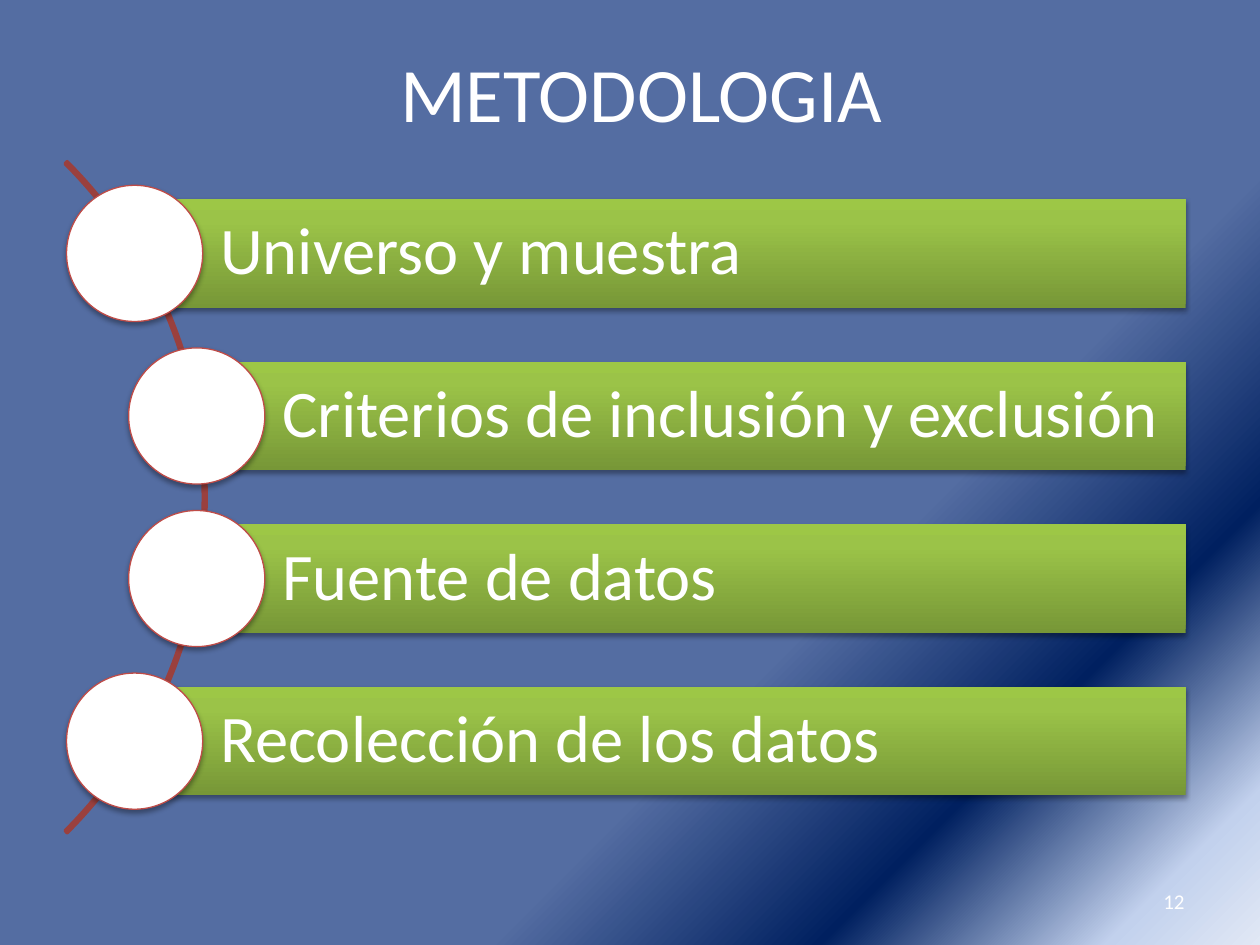
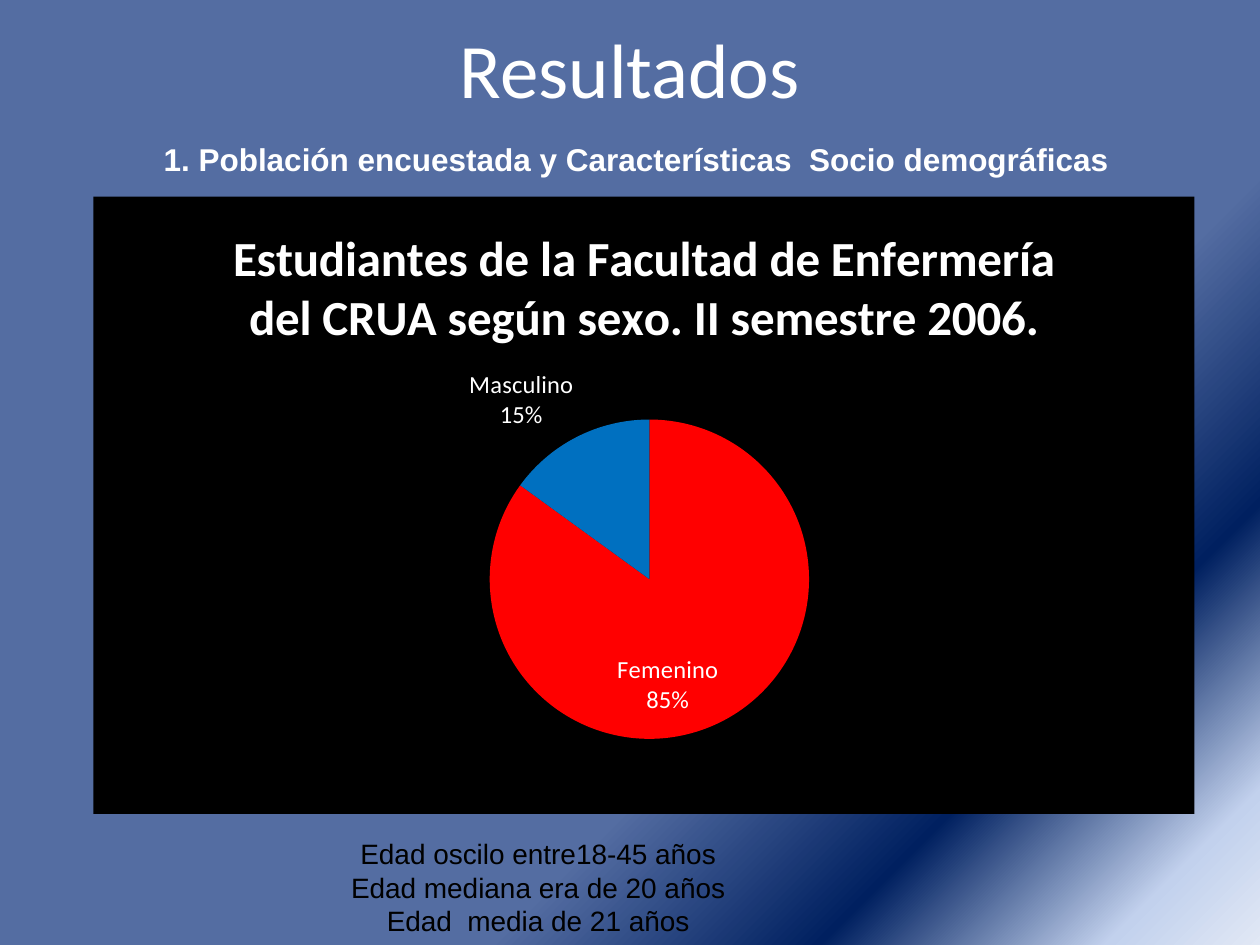
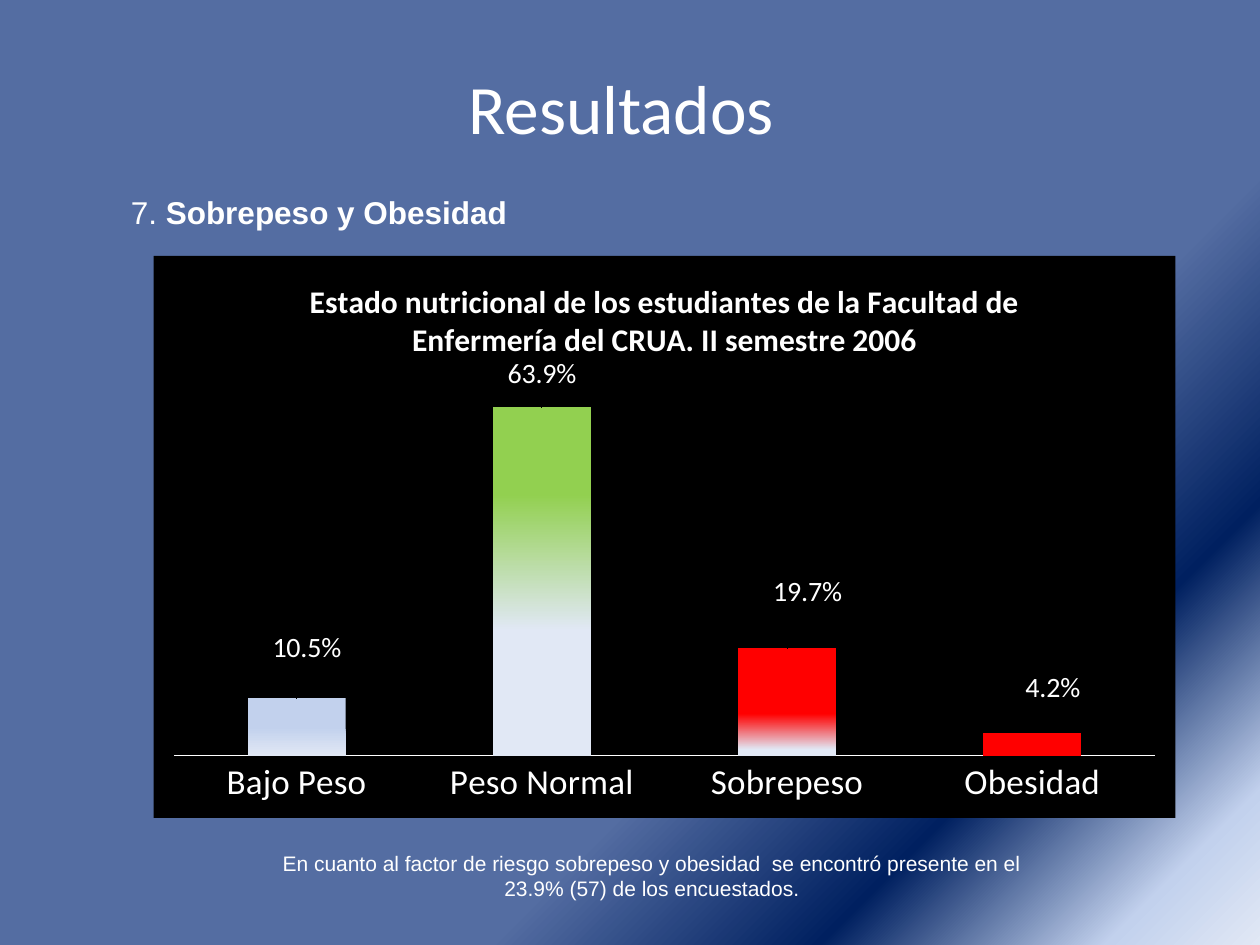
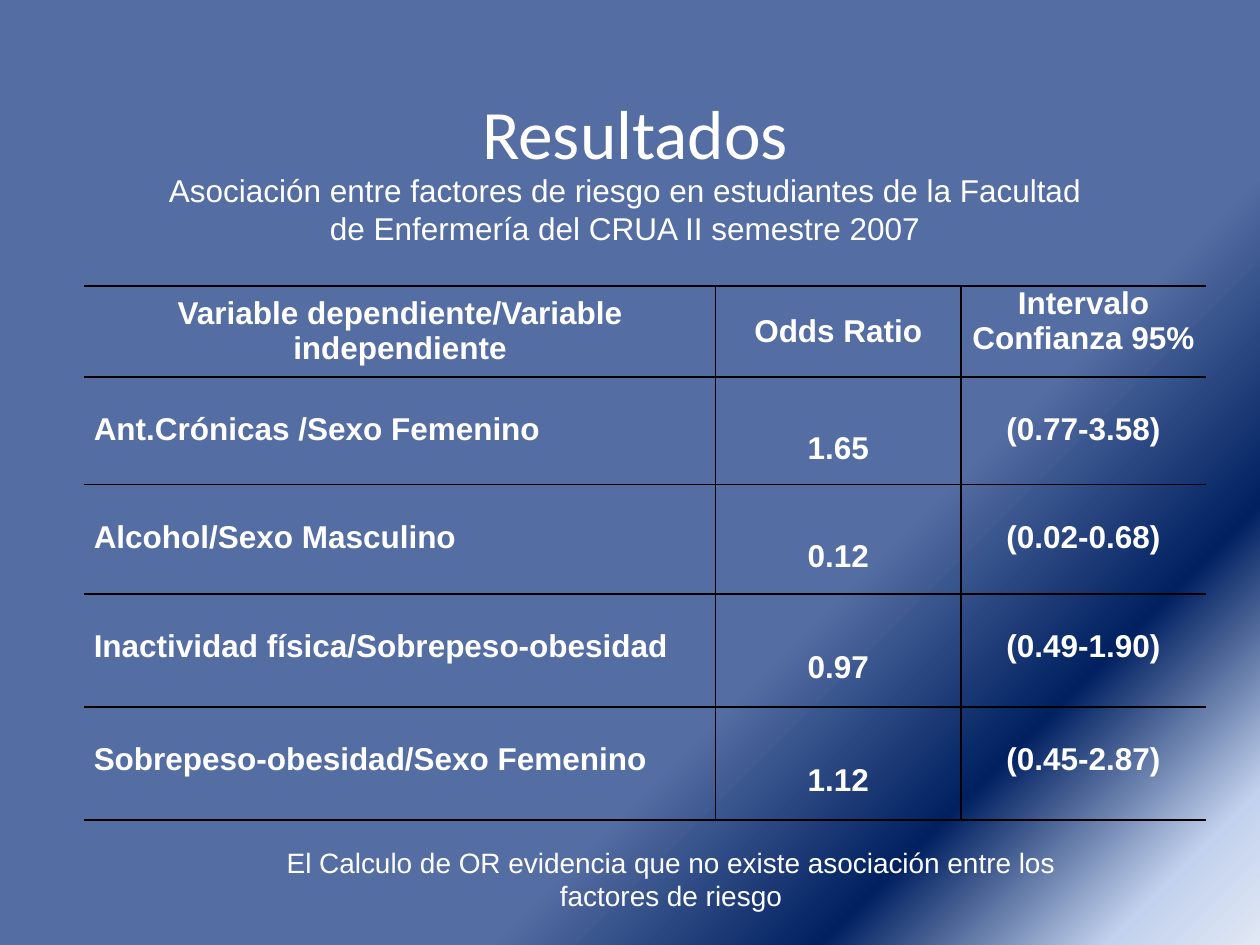
from lxml import etree
from pptx import Presentation
from pptx.chart.data import CategoryChartData
from pptx.dml.color import RGBColor
from pptx.enum.chart import XL_CHART_TYPE, XL_LABEL_POSITION, XL_TICK_MARK
from pptx.enum.shapes import MSO_SHAPE
from pptx.enum.text import MSO_ANCHOR, PP_ALIGN
from pptx.oxml.ns import qn
from pptx.util import Pt

LEFT, CENTER, RIGHT, JUSTIFY = PP_ALIGN.LEFT, PP_ALIGN.CENTER, PP_ALIGN.RIGHT, PP_ALIGN.JUSTIFY
TOP, MIDDLE = MSO_ANCHOR.TOP, MSO_ANCHOR.MIDDLE
INSIDE_END, OUTSIDE_END = XL_LABEL_POSITION.INSIDE_END, XL_LABEL_POSITION.OUTSIDE_END
PIE, COLUMNS = XL_CHART_TYPE.PIE, XL_CHART_TYPE.COLUMN_CLUSTERED
NO_TICKS = XL_TICK_MARK.NONE
ARC, OVAL, RECTANGLE = MSO_SHAPE.BLOCK_ARC, MSO_SHAPE.OVAL, MSO_SHAPE.RECTANGLE

COLORS = {
    "white": "FFFFFF", "black": "000000", "red": "FF0000", "blue": "0070C0",
    "slate": "546DA2", "navy": "002060", "sky": "C2D1ED", "pale": "E1E8F5",
    "lime": "92D050", "arc": "9A403E", "ring": "BF4C48",
    "bar_dark": "779737", "bar_mid": "9BC348", "bar_light": "9DC746",
}
HEADING, BODY = "Calibri", "Arial"
BACKDROP = [(65, "slate"), (80, "navy"), (93, "sky"), (100, "pale")]
BAR_STOPS = [(0, "bar_dark"), (80, "bar_mid"), (100, "bar_light")]


# Shared helpers
def rgb(name):
    return RGBColor.from_string(COLORS[name])


def points(box):
    return [Pt(length) for length in box]


def add_xml(parent, tag, **attributes):
    return etree.SubElement(parent, qn(tag), {k: str(v) for k, v in attributes.items()})


def set_solid(fill, color):
    fill.solid()
    fill.fore_color.rgb = rgb(color)


def set_gradient(fill, stops, angle):
    """Angle is clockwise, in degrees."""
    fill.gradient()
    fill.gradient_angle = 360 - angle
    stop_list = fill.gradient_stops[0]._gs.getparent()
    for old in list(stop_list):
        stop_list.remove(old)
    for position, color in stops:
        stop = add_xml(stop_list, "a:gs", pos=position * 1000)
        add_xml(stop, "a:srgbClr", val=COLORS[color])


def style_font(font, size, color="white", name=HEADING, bold=False):
    font.size, font.name, font.bold = Pt(size), name, bold
    font.color.rgb = rgb(color)


def add_run(paragraph, text, size, **style):
    run = paragraph.add_run()
    run.text = text
    style_font(run.font, size, **style)


def add_text(slide, box, lines, size, align=LEFT, anchor=TOP, name=BODY, **style):
    frame = slide.shapes.add_textbox(*points(box)).text_frame
    frame.word_wrap = True
    frame.vertical_anchor = anchor
    for index, line in enumerate(lines):
        paragraph = frame.add_paragraph() if index else frame.paragraphs[0]
        paragraph.alignment = align
        add_run(paragraph, line, size, name=name, **style)
    return frame


def add_slide(prs, title, box, size):
    slide = prs.slides.add_slide(prs.slide_layouts[6])
    set_gradient(slide.background.fill, BACKDROP, 45)
    add_text(slide, box, [title], size, CENTER, MIDDLE, HEADING)
    return slide


def soft_shadow(shape):
    shape.shadow.inherit = False
    effects = shape.element.spPr.find(qn("a:effectLst"))
    shadow = add_xml(effects, "a:outerShdw", blurRad=Pt(3.1), dist=Pt(1.8),
                     dir=90 * 60000, rotWithShape=0)
    add_xml(add_xml(shadow, "a:srgbClr", val=COLORS["black"]), "a:alpha", val=35000)


# Curved list of topics
def add_topic_list(slide, box, topics):
    left, top, width, height = box
    pitch, bar_height, disc, step_in = 92.9, 62, 77.8, 35.5

    arc_size = 542.2
    arc = slide.shapes.add_shape(ARC, *points(
        (left + 79.8 - arc_size, top + (height - arc_size) / 2, arc_size, arc_size)))
    arc.adjustments[0], arc.adjustments[1], arc.adjustments[2] = 189, 27, 0.003
    arc.shadow.inherit = False
    arc.fill.background()
    arc.line.color.rgb = rgb("arc")
    arc.line.width = Pt(2)

    for index, topic in enumerate(topics):
        inner = 0 < index < len(topics) - 1
        bar_left = left + disc / 2 + (step_in if inner else 0)
        center_y = top + disc / 2 + index * pitch
        bar = slide.shapes.add_shape(RECTANGLE, *points(
            (bar_left, center_y - bar_height / 2, left + width - bar_left, bar_height)))
        set_gradient(bar.fill, BAR_STOPS, 270)
        bar.line.fill.background()
        soft_shadow(bar)
        frame = bar.text_frame
        frame.word_wrap = True
        frame.vertical_anchor = MIDDLE
        frame.margin_left = Pt(49)
        frame.margin_top = frame.margin_right = frame.margin_bottom = Pt(7.6)
        paragraph = frame.paragraphs[0]
        paragraph.alignment = LEFT
        paragraph.line_spacing = 0.9
        add_run(paragraph, topic, 38)

        knob = slide.shapes.add_shape(OVAL, *points(
            (bar_left - disc / 2, center_y - disc / 2, disc, disc)))
        set_solid(knob.fill, "white")
        knob.line.color.rgb = rgb("ring")
        knob.line.width = Pt(0.75)
        soft_shadow(knob)


# Charts on a black panel
def manual_layout(**values):
    layout = etree.Element(qn("c:layout"))
    manual = add_xml(layout, "c:manualLayout")
    for tag, value in values.items():
        add_xml(manual, f"c:{tag}", val=value)
    return layout


def add_panel_chart(slide, box, kind, title, title_size, data, plot_box, number_format):
    chart_data = CategoryChartData(number_format=number_format)
    chart_data.categories = list(data)
    chart_data.add_series("Series 1", list(data.values()))
    chart = slide.shapes.add_chart(kind, *points(box), chart_data).chart
    chart.has_legend = False
    style_font(chart.font, 10)
    chart.has_title = True
    add_run(chart.chart_title.text_frame.paragraphs[0], title, title_size, bold=True)
    chart.chart_title.include_in_layout = False

    # Panel fill and plot position
    panel = etree.Element(qn("c:spPr"))
    add_xml(add_xml(panel, "a:solidFill"), "a:srgbClr", val=COLORS["black"])
    add_xml(add_xml(panel, "a:ln"), "a:noFill")
    chart.element.find(qn("c:chart")).addnext(panel)
    plot_area = next(chart.element.iter(qn("c:plotArea")))
    for old in plot_area.findall(qn("c:layout")):
        plot_area.remove(old)
    x, y, w, h = plot_box
    plot_area.insert(0, manual_layout(layoutTarget="inner", xMode="edge", yMode="edge",
                                      x=x, y=y, w=w, h=h))
    return chart


def label_point(point, position, size):
    point.data_label.position = position
    style_font(point.data_label.font, size)


def add_sex_pie(slide, box):
    chart = add_panel_chart(
        slide, box, PIE,
        "Estudiantes de la Facultad de Enfermería del CRUA según sexo. II semestre 2006.", 28,
        {"Femenino": 85, "Masculino": 15}, (0.36, 0.36, 0.29, 0.52), "General")
    plot = chart.plots[0]
    plot.vary_by_categories = True
    slices = [("red", INSIDE_END), ("blue", OUTSIDE_END)]
    for index, (color, position) in enumerate(slices):
        point = plot.series[0].points[index]
        set_solid(point.format.fill, color)
        label_point(point, position, 14)
    for label in chart.element.iter(qn("c:dLbl")):
        for tag, shown in (("showVal", 0), ("showCatName", 1), ("showPercent", 1)):
            label.find(qn(f"c:{tag}")).set("val", str(shown))
        add_xml(label, "c:separator").text = "\n"


def add_weight_columns(slide, box):
    chart = add_panel_chart(
        slide, box, COLUMNS,
        "Estado nutricional de los estudiantes de la Facultad de Enfermería del CRUA. "
        "II semestre 2006", 18,
        {"Bajo Peso": 0.105, "Peso Normal": 0.639, "Sobrepeso": 0.197, "Obesidad": 0.042},
        (0.02, 0.21, 0.96, 0.68), "0.0%")
    plot = chart.plots[0]
    plot.vary_by_categories = False
    plot.gap_width = 150

    # Axes
    chart.value_axis.visible = False
    chart.value_axis.has_major_gridlines = False
    chart.value_axis.minimum_scale, chart.value_axis.maximum_scale = 0, 0.7
    weights = chart.category_axis
    weights.major_tick_mark = NO_TICKS
    weights.format.line.color.rgb = rgb("white")
    style_font(weights.tick_labels.font, 20)

    # Column colours and labels
    fills = [
        [(50, "sky"), (100, "pale")],
        [(25, "lime"), (64, "pale")],
        [(18, "red"), (61, "red"), (94, "pale")],
        None,
    ]
    for index, stops in enumerate(fills):
        point = plot.series[0].points[index]
        if stops:
            set_gradient(point.format.fill, stops, 90)
        else:
            set_solid(point.format.fill, "red")
        label_point(point, OUTSIDE_END, 16)
    shifts = [(0.01, -0.05), (0, -0.02), (0.02, -0.06), (0.02, -0.04)]
    for label, (x, y) in zip(chart.element.iter(qn("c:dLbl")), shifts):
        label.insert(1, manual_layout(x=x, y=y))


# Table of odds ratios
def set_borders(cell, sides):
    properties = cell._tc.get_or_add_tcPr()
    for index, side in enumerate("LRTB"):
        line = etree.Element(qn(f"a:ln{side}"), w=str(Pt(1)))
        if side in sides:
            add_xml(add_xml(line, "a:solidFill"), "a:srgbClr", val=COLORS["black"])
        else:
            add_xml(line, "a:noFill")
        properties.insert(index, line)


def add_odds_table(slide, box, rows):
    column_widths = [360.8, 140.1, 140.1]
    row_heights = [52, 61.4, 62.6, 64.6, 64.6]
    column_rules = [(JUSTIFY, TOP, "RTB"), (CENTER, MIDDLE, "LRTB"), (CENTER, TOP, "LTB")]
    table = slide.shapes.add_table(len(rows), len(column_widths), *points(box)).table
    table.first_row = table.horz_banding = False
    for column, width in zip(table.columns, column_widths):
        column.width = Pt(width)
    for r, (row, height) in enumerate(zip(rows, row_heights)):
        table.rows[r].height = Pt(height)
        for c, (text, (align, anchor, sides)) in enumerate(zip(row, column_rules)):
            header = r == 0
            cell = table.cell(r, c)
            cell.fill.background()
            set_borders(cell, sides)
            cell.margin_left = cell.margin_right = Pt(5.4)
            cell.margin_top = cell.margin_bottom = 0
            cell.vertical_anchor = MIDDLE if header and c == 0 else anchor
            paragraph = cell.text_frame.paragraphs[0]
            paragraph.alignment = CENTER if header else align
            paragraph.line_spacing = 1.0 if header else 2.0
            add_run(paragraph, text, 18, name=BODY, bold=True)


# Slides
def methodology_slide(prs):
    slide = add_slide(prs, "METODOLOGIA", (39.6, 7.2, 653.8, 90), 44)
    add_text(slide, (516.2, 500.4, 167.8, 28.8), ["12"], 12, RIGHT, MIDDLE, HEADING)
    add_topic_list(slide, (38, 105.9, 639.5, 356.5), [
        "Universo y muestra", "Criterios de inclusión y exclusión",
        "Fuente de datos", "Recolección de los datos"])


def population_slide(prs):
    slide = add_slide(prs, "Resultados", (33.1, 0, 653.8, 77), 44)
    add_text(slide, (86.4, 76.3, 562.3, 72.7),
             ["1. Población encuestada y Características  Socio demográficas"], 18, bold=True)
    add_sex_pie(slide, (53.3, 112.3, 629.3, 352.8))
    add_text(slide, (110.2, 474.5, 394.6, 65.5),
             ["Edad oscilo entre18-45 años", "Edad mediana era de 20 años",
              "Edad  media de 21 años"], 16, CENTER, color="black")


def weight_slide(prs):
    slide = add_slide(prs, "Resultados", (28.1, 36, 653.8, 50.4), 39.6)
    subtitle = add_text(slide, (67.7, 106.6, 421.9, 28.8), ["7. "], 18)
    add_run(subtitle.paragraphs[0], "Sobrepeso y Obesidad", 18, name=BODY, bold=True)
    add_weight_columns(slide, (87.8, 146.2, 583.9, 321.1))
    add_text(slide, (144.7, 482.4, 455.8, 57.6),
             ["En cuanto al factor de riesgo sobrepeso y obesidad  se encontró presente en el "
              "23.9% (57) de los encuestados."], 12, CENTER)


def association_slide(prs):
    slide = add_slide(prs, "Resultados", (36, 55.4, 653.8, 40.3), 39.6)
    add_odds_table(slide, (48.2, 163.4, 641, 305.2), [
        ("Variable dependiente/Variable independiente", "Odds Ratio", "Intervalo Confianza 95%"),
        ("Ant.Crónicas /Sexo Femenino", "1.65", "(0.77-3.58)"),
        ("Alcohol/Sexo Masculino", "0.12", "(0.02-0.68)"),
        ("Inactividad física/Sobrepeso-obesidad", "0.97", "(0.49-1.90)"),
        ("Sobrepeso-obesidad/Sexo Femenino", "1.12", "(0.45-2.87)"),
    ])
    add_text(slide, (87.8, 94.3, 538.6, 51.1),
             ["Asociación entre factores de riesgo en estudiantes de la Facultad "
              "de Enfermería del CRUA II semestre 2007"], 18, CENTER)
    add_text(slide, (155.5, 479.5, 455.8, 46.1),
             ["El Calculo de OR evidencia que no existe asociación entre los "
              "factores de riesgo"], 16, CENTER)


def main():
    prs = Presentation()
    prs.slide_width, prs.slide_height = Pt(720), Pt(540)
    methodology_slide(prs)
    population_slide(prs)
    weight_slide(prs)
    association_slide(prs)
    prs.save("out.pptx")


if __name__ == "__main__":
    main()
